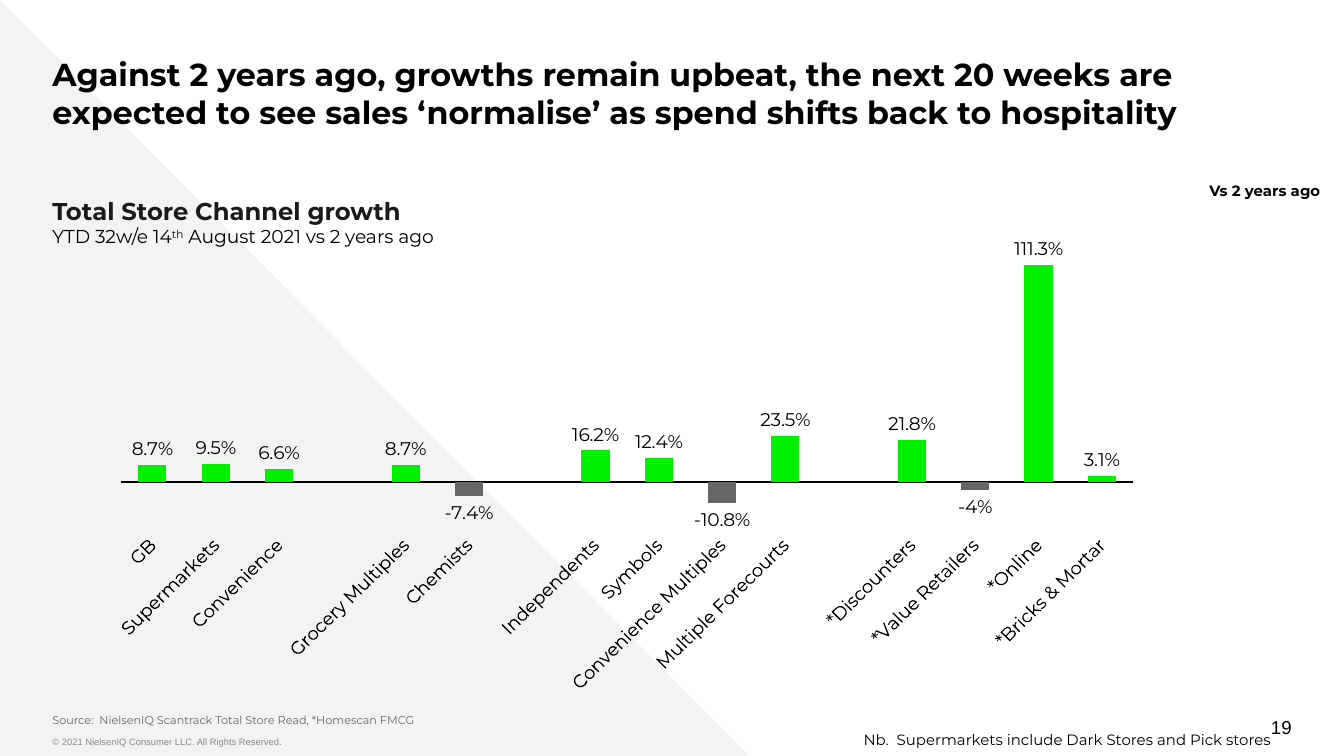
from dataclasses import dataclass

from lxml import etree
from pptx import Presentation
from pptx.chart.data import CategoryChartData
from pptx.dml.color import RGBColor
from pptx.enum import chart as chart_enum, shapes, text
from pptx.oxml import ns
from pptx.util import Inches, Pt


@dataclass(frozen=True)
class Theme:
    font: str = "Montserrat"
    footer_font: str = "Arial"
    black: str = "000000"
    heading: str = "1A1A1A"
    source: str = "666666"
    copyright: str = "888888"
    backdrop: str = "F3F3F3"
    growth: str = "00F000"
    decline: str = "666666"
    title_size: float = 17
    heading_size: float = 13
    body_size: float = 10
    note_size: float = 8
    source_size: float = 6
    copyright_size: float = 5


THEME = Theme()

CHANNELS = [
    ("GB", 0.087), ("Supermarkets", 0.095), ("Convenience", 0.066),
    (" ", None),
    ("Grocery Multiples", 0.087), ("Chemists", -0.074),
    ("", None),
    ("Independents", 0.162), ("Symbols", 0.124),
    ("Convenience Multiples", -0.108), ("Multiple Forecourts", 0.235),
    ("", None),
    ("*Discounters", 0.218), ("*Value Retailers", -0.043),
    ("*Online", 1.113), ("*Bricks & Mortar", 0.031),
]
ROUNDED_CHANNEL = "*Value Retailers"


def style_font(font, size, color=THEME.black, bold=False, name=THEME.font):
    font.name, font.size, font.bold = name, Pt(size), bold
    font.color.rgb = RGBColor.from_string(color)


def add_text_box(slide, box, insets=(0, 0.05), anchor=text.MSO_ANCHOR.TOP, wrap=True):
    """Add an empty text box; insets are (sides, top and bottom) in inches."""
    frame = slide.shapes.add_textbox(*map(Inches, box)).text_frame
    frame.word_wrap = wrap
    frame.vertical_anchor = anchor
    frame.margin_left = frame.margin_right = Inches(insets[0])
    frame.margin_top = frame.margin_bottom = Inches(insets[1])
    return frame


def add_line(slide, box, wording, size, color=THEME.black, bold=False,
             name=THEME.font, align=text.PP_ALIGN.LEFT, **frame_options):
    paragraph = add_text_box(slide, box, **frame_options).paragraphs[0]
    paragraph.text = wording
    paragraph.alignment = align
    style_font(paragraph.runs[0].font, size, color, bold, name)


def add_backdrop(slide, box):
    triangle = slide.shapes.add_shape(
        shapes.MSO_SHAPE.RIGHT_TRIANGLE, *map(Inches, box))
    triangle.shadow.inherit = False
    triangle.fill.solid()
    triangle.fill.fore_color.rgb = RGBColor.from_string(THEME.backdrop)
    triangle.line.fill.background()


def add_chart_heading(slide, box):
    paragraph = add_text_box(slide, box).paragraphs[0]
    paragraph.space_after = Pt(12)
    heading = paragraph.add_run()
    heading.text = "Total Store Channel growth"
    style_font(heading.font, THEME.heading_size, THEME.heading, bold=True)
    paragraph.add_line_break()
    for wording, baseline in (("YTD 32w/e 14", 0), ("th", 30000),
                              (" August 2021 vs 2 years ago", 0)):
        run = paragraph.add_run()
        run.text = wording
        style_font(run.font, THEME.body_size)
        if baseline:
            run._r.get_or_add_rPr().set("baseline", str(baseline))


def set_plot_area(chart, x, y, width, height):
    """Fix the inner plot area, as fractions of the chart."""
    plot_area = chart._chartSpace.find(".//" + ns.qn("c:plotArea"))
    layout = plot_area.find(ns.qn("c:layout"))
    if layout is None:
        layout = etree.Element(ns.qn("c:layout"))
        plot_area.insert(0, layout)
    manual = etree.SubElement(layout, ns.qn("c:manualLayout"))
    for tag, value in (("layoutTarget", "inner"), ("xMode", "edge"),
                       ("yMode", "edge"), ("x", x), ("y", y),
                       ("w", width), ("h", height)):
        etree.SubElement(manual, ns.qn("c:" + tag)).set("val", str(value))


def style_axes(chart):
    category_axis, value_axis = chart.category_axis, chart.value_axis
    value_axis.visible = False
    value_axis.has_major_gridlines = False
    value_axis.minimum_scale, value_axis.maximum_scale = -0.2, 1.2
    value_axis.tick_labels.number_format = "0.0%"
    value_axis.tick_labels.number_format_is_linked = False
    category_axis.has_major_gridlines = False
    category_axis.major_tick_mark = chart_enum.XL_TICK_MARK.NONE
    category_axis.minor_tick_mark = chart_enum.XL_TICK_MARK.NONE
    category_axis.tick_label_position = chart_enum.XL_TICK_LABEL_POSITION.LOW
    category_axis.format.line.width = Pt(0.75)
    category_axis.format.line.color.rgb = RGBColor.from_string(THEME.black)
    style_font(category_axis.tick_labels.font, THEME.body_size)
    label_body = category_axis._element.find(
        ns.qn("c:txPr") + "/" + ns.qn("a:bodyPr"))
    label_body.set("rot", "-2700000")
    label_body.set("vert", "horz")


def style_labels(series):
    labels = series.data_labels
    labels.show_value = True
    labels.number_format, labels.number_format_is_linked = "0.0%", False
    labels.position = chart_enum.XL_LABEL_POSITION.OUTSIDE_END
    style_font(labels.font, THEME.body_size)

    index = [name for name, _ in CHANNELS].index(ROUNDED_CHANNEL)
    rounded = series.points[index].data_label
    style_font(rounded.font, THEME.body_size)
    rounded.position = chart_enum.XL_LABEL_POSITION.OUTSIDE_END
    number_format = etree.Element(
        ns.qn("c:numFmt"), formatCode="0%", sourceLinked="0")
    series._element.find(".//" + ns.qn("c:dLbl")).insert(1, number_format)


def add_growth_chart(slide, box):
    data = CategoryChartData(number_format="0.0%")
    data.categories = [name for name, _ in CHANNELS]
    data.add_series("Series 1", [growth for _, growth in CHANNELS])
    chart = slide.shapes.add_chart(
        chart_enum.XL_CHART_TYPE.COLUMN_CLUSTERED, *map(Inches, box), data).chart
    chart.has_legend = chart.has_title = False
    style_font(chart.font, THEME.body_size)
    set_plot_area(chart, 0.01, 0.06, 0.96, 0.59)
    style_axes(chart)

    plot = chart.plots[0]
    plot.gap_width = 125
    plot.vary_by_categories = False
    series = plot.series[0]
    series.invert_if_negative = False
    series.format.fill.solid()
    series.format.fill.fore_color.rgb = RGBColor.from_string(THEME.growth)
    for index, (_, growth) in enumerate(CHANNELS):
        if growth is not None and growth < 0:
            fill = series.points[index].format.fill
            fill.solid()
            fill.fore_color.rgb = RGBColor.from_string(THEME.decline)
    style_labels(series)


def add_footer(slide):
    add_line(slide, (0.39, 5.43, 5.54, 0.2),
             "© 2021 NielsenIQ Consumer LLC. All Rights Reserved.",
             THEME.copyright_size, THEME.copyright, name=THEME.footer_font)
    add_line(slide, (7.36, 5.26, 2.25, 0.3), "19", THEME.body_size,
             name=THEME.footer_font, align=text.PP_ALIGN.RIGHT,
             anchor=text.MSO_ANCHOR.MIDDLE)
    add_line(slide, (0.39, 5.26, 8.92, 0.2),
             "Source:  NielsenIQ Scantrack Total Store Read, *Homescan FMCG",
             THEME.source_size, THEME.source, insets=(0, 0.1),
             anchor=text.MSO_ANCHOR.BOTTOM)
    add_line(slide, (6.29, 5.39, 3.27, 0.24),
             "Nb.  Supermarkets include Dark Stores and Pick stores",
             THEME.note_size, align=text.PP_ALIGN.RIGHT,
             insets=(0.1, 0.05), wrap=False)


def main():
    presentation = Presentation()
    presentation.slide_width = Inches(10)
    presentation.slide_height = presentation.slide_width * 9 // 16
    slide = presentation.slides.add_slide(presentation.slide_layouts[6])
    add_backdrop(slide, (0, 0, 5.59, 5.64))
    add_line(slide, (0.39, 0.31, 9.54, 0.44),
             "Against 2 years ago, growths remain upbeat, the next 20 weeks are "
             "expected to see sales ‘normalise’ as spend shifts back to hospitality",
             THEME.title_size, bold=True, insets=(0, 0.1))
    add_chart_heading(slide, (0.39, 1.41, 4.16, 0.49))
    add_growth_chart(slide, (0.82, 1.64, 7.85, 3.52))
    add_line(slide, (8.9, 1.3, 1.04, 0.24), "Vs 2 years ago", THEME.note_size,
             bold=True, insets=(0.1, 0.05), wrap=False)
    add_footer(slide)
    presentation.save("out.pptx")


if __name__ == "__main__":
    main()
